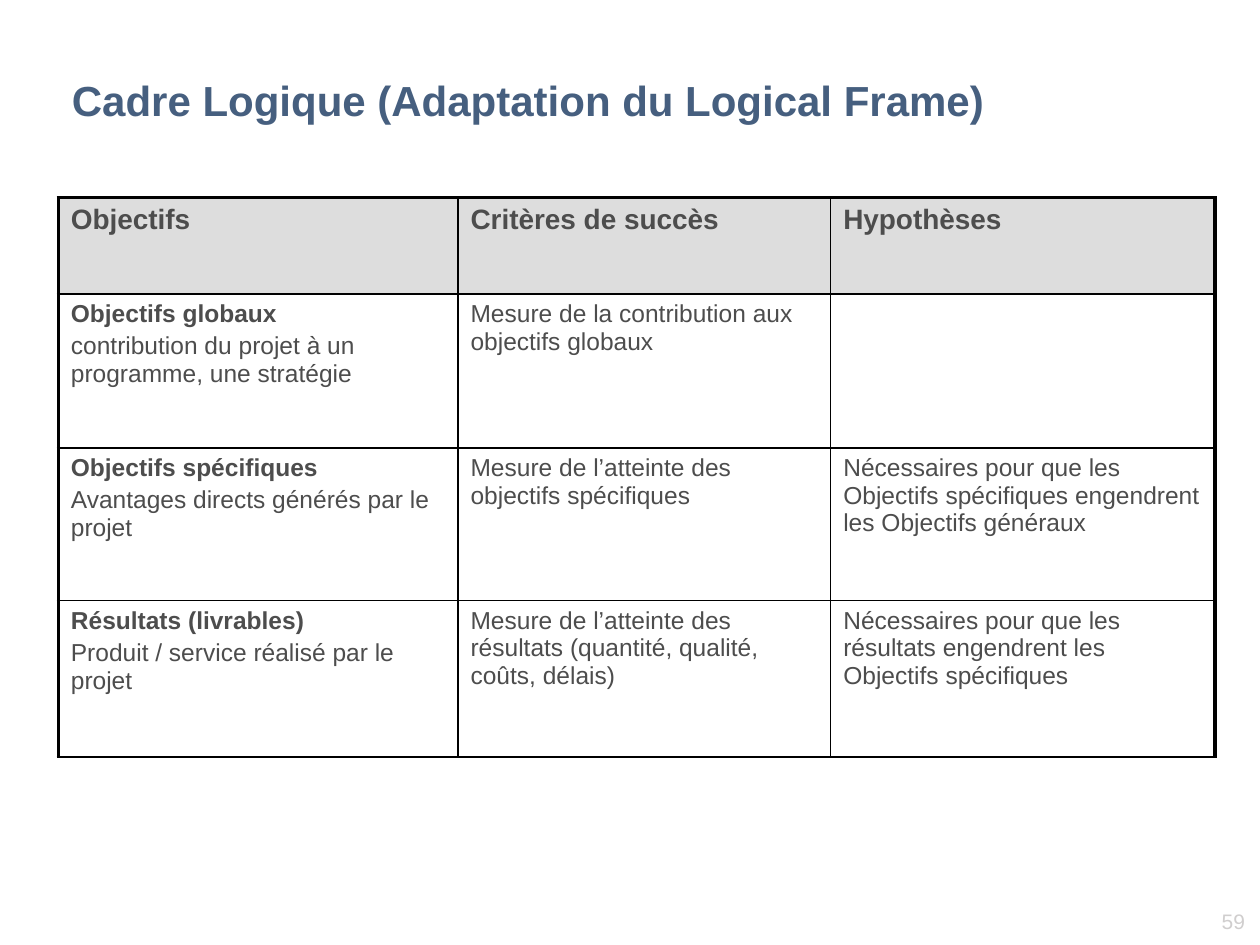
from dataclasses import dataclass
from lxml import etree
from pptx import Presentation
from pptx import util as u
from pptx.dml.color import RGBColor
from pptx.enum import text
from pptx.oxml.ns import qn


@dataclass(frozen=True)
class Theme:
    font: str = "Arial"
    title: str = "465F7F"
    body: str = "4D4D4D"
    number: str = "D0CECE"
    header_fill: str = "DDDDDD"
    border: str = "000000"
    title_size: float = 24
    header_size: float = 16
    body_size: float = 14
    number_size: float = 12
    thin: float = 1
    thick: float = 2.25
    gap: float = 2.8


class Deck:
    def __init__(self, prs, theme):
        self.theme = theme
        self.s = prs.slides.add_slide(prs.slide_layouts[6])

    def style(self, p, size, color, bold=False):
        for r in p.runs:
            r.font.name = self.theme.font
            r.font.size = u.Pt(size)
            r.font.bold = bold
            r.font.color.rgb = RGBColor.from_string(color)

    def label(self, box, words, size, color, bold=False, align=text.PP_ALIGN.LEFT):
        tf = self.s.shapes.add_textbox(*map(u.Pt, box)).text_frame
        tf.word_wrap = True
        tf.vertical_anchor = text.MSO_ANCHOR.MIDDLE
        tf.text = words
        p = tf.paragraphs[0]
        p.alignment = align
        self.style(p, size, color, bold)

    def borders(self, cell, widths):
        tc_pr = cell._tc.get_or_add_tcPr()
        for i, (side, width) in enumerate(widths.items()):
            ln = etree.Element(qn(f"a:ln{side}"), w=str(u.Pt(width)))
            fill = etree.SubElement(ln, qn("a:solidFill"))
            etree.SubElement(fill, qn("a:srgbClr"), val=self.theme.border)
            tc_pr.insert(i, ln)

    def cell(self, cell, words, header, bold_first):
        t = self.theme
        if header:
            cell.fill.solid()
            cell.fill.fore_color.rgb = RGBColor.from_string(t.header_fill)
        else:
            cell.fill.background()
        tf = cell.text_frame
        tf.text = words
        for i, p in enumerate(tf.paragraphs):
            p.space_before = u.Pt(t.gap if i else 0)
            size = t.header_size if header else t.body_size
            self.style(p, size, t.body, header or (bold_first and i == 0))

    def table(self, left, top, widths, heights, rows):
        t = self.theme
        frame = self.s.shapes.add_table(
            len(rows), len(widths), u.Pt(left), u.Pt(top),
            u.Pt(sum(widths)), u.Pt(sum(heights)))
        tbl = frame.table
        tbl.horz_banding = False
        for col, width in zip(tbl.columns, widths):
            col.width = u.Pt(width)
        for row, height in zip(tbl.rows, heights):
            row.height = u.Pt(height)
        last = len(widths) - 1
        for i, row in enumerate(rows):
            for j, words in enumerate(row):
                cell = tbl.cell(i, j)
                self.cell(cell, words, i == 0, j == 0)
                self.borders(cell, {
                    "L": t.thick if j == 0 else t.thin,
                    "R": t.thick if j == last else t.thin,
                    "T": t.thick if i == 0 else t.thin,
                    "B": t.thin,
                })


ROWS = [
    ["Objectifs", "Critères de succès", "Hypothèses"],
    ["Objectifs globaux\ncontribution du projet à un programme, une stratégie",
     "Mesure de la contribution aux objectifs globaux",
     ""],
    ["Objectifs spécifiques\nAvantages directs générés par le projet",
     "Mesure de l’atteinte des objectifs spécifiques",
     "Nécessaires pour que les Objectifs spécifiques engendrent les Objectifs généraux"],
    ["Résultats (livrables)\nProduit / service réalisé par le projet",
     "Mesure de l’atteinte des résultats (quantité, qualité, coûts, délais)",
     "Nécessaires pour que les résultats engendrent les Objectifs spécifiques"],
]


def main():
    prs = Presentation()
    prs.slide_width, prs.slide_height = u.Pt(720), u.Pt(540)
    t = Theme()
    deck = Deck(prs, t)
    deck.label((659.5, 515.5, 59, 21.6), "59", t.number_size, t.number,
               align=text.PP_ALIGN.RIGHT)
    deck.label((34, 37, 610, 40), "Cadre Logique (Adaptation du Logical Frame)",
               t.title_size, t.title, bold=True)
    deck.table(33.3, 113, [228.4, 213, 219.6], [55, 88, 87.2, 89.4], ROWS)
    prs.save("out.pptx")


if __name__ == "__main__":
    main()
